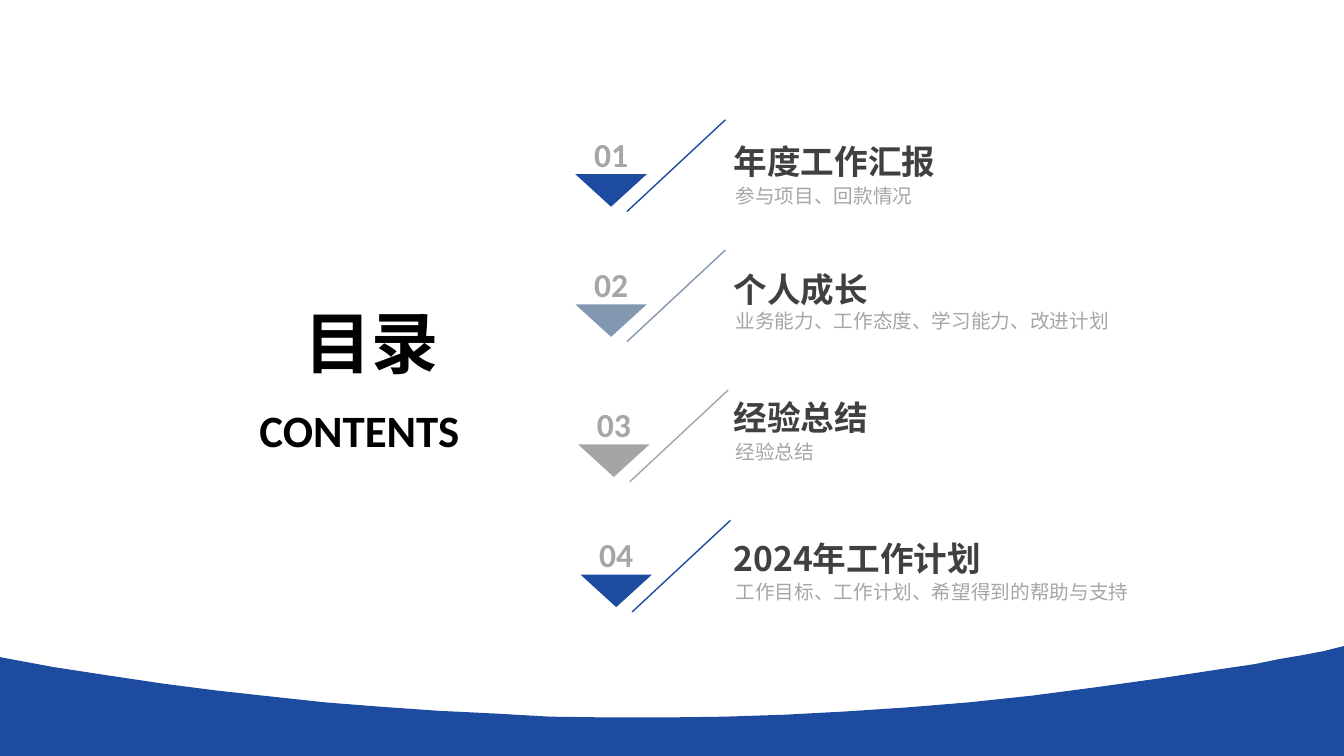
"""Build a contents slide with four numbered sections above a blue wave."""
from dataclasses import dataclass

from lxml import etree
from pptx import Presentation
from pptx.dml.color import RGBColor
from pptx.enum.shapes import MSO_CONNECTOR
from pptx.enum.text import MSO_ANCHOR, MSO_AUTO_SIZE, PP_ALIGN
from pptx.oxml.ns import qn
from pptx.util import Cm, Pt

LEFT, CENTER = PP_ALIGN.LEFT, PP_ALIGN.CENTER
TOP, MIDDLE, BOTTOM = MSO_ANCHOR.TOP, MSO_ANCHOR.MIDDLE, MSO_ANCHOR.BOTTOM
FIT_SHAPE = MSO_AUTO_SIZE.SHAPE_TO_FIT_TEXT
STRAIGHT = MSO_CONNECTOR.STRAIGHT

CJK, LATIN = "Noto Sans CJK SC", "Calibri"
COLORS = {
    "blue": "1D4BA0", "steel": "8497B0", "gray": "A5A5A5",
    "black": "000000", "title": "404040", "muted": "A6A6A6",
}
WAVE = [
    (33.87, 16.28), (33.87, 19.1), (0, 19.1), (0, 16.56), (1.35, 16.81),
    (2.72, 17.02), (4.06, 17.22), (5.44, 17.4), (6.81, 17.55), (8.2, 17.7),
    (9.6, 17.81), (11.02, 17.91), (12.45, 17.98), (13.87, 18.06),
    (15.32, 18.08), (16.79, 18.08), (18.26, 18.06), (19.79, 18.01),
    (21.29, 17.93), (22.83, 17.83), (24.41, 17.7), (26.01, 17.53),
    (27.61, 17.32), (29.26, 17.09), (30.91, 16.84), (31.6, 16.74),
    (32.23, 16.61), (32.82, 16.51), (33.35, 16.41),
]


@dataclass(frozen=True)
class Style:
    """Look of one kind of text."""
    size: int
    font: str
    color: str
    bold: bool = True
    align: PP_ALIGN = LEFT
    anchor: MSO_ANCHOR = TOP
    inset: bool = True
    spacing: float = 1.0


@dataclass(frozen=True)
class Section:
    """One numbered entry: marker corner, text tops and widths in cm."""
    title: str
    detail: str
    color: str
    x: float
    y: float
    title_top: float
    title_width: float
    detail_top: float
    detail_width: float = 10
    detail_height: float = 0.86
    detail_spacing: float = 1.0


HEADING = Style(48, CJK, "black", align=CENTER, anchor=MIDDLE, inset=False)
SUBHEADING = Style(32, LATIN, "black", align=CENTER, inset=False)
NUMBER = Style(24, LATIN, "muted", align=CENTER, anchor=BOTTOM, inset=False)
TITLE = Style(24, CJK, "title", spacing=1.3)

SECTIONS = [
    Section("年度工作汇报", "参与项目、回款情况", "blue",
            14.5, 4.39, 3.12, 8.59, 4.5),
    Section("个人成长", "业务能力、工作态度、学习能力、改进计划", "steel",
            14.5, 7.67, 6.35, 6.3, 7.65),
    Section("经验总结", "经验总结", "gray",
            14.57, 11.2, 9.58, 6.3, 10.97),
    Section("2024年工作计划", "工作目标、工作计划、希望得到的帮助与支持", "blue",
            14.63, 14.48, 13.13, 9.12, 14.38, 11.68, 0.97, 1.2),
]


def rgb(name: str) -> RGBColor:
    """Look up a palette colour."""
    return RGBColor.from_string(COLORS[name])


def add_text(s, text: str, box: tuple, style: Style) -> None:
    """Add a text box, with its box given in cm."""
    tf = s.shapes.add_textbox(*map(Cm, box)).text_frame
    tf.word_wrap = True
    tf.auto_size = FIT_SHAPE
    tf.vertical_anchor = style.anchor
    if not style.inset:
        tf.margin_left = tf.margin_right = tf.margin_top = tf.margin_bottom = 0
    tf.text = text
    p = tf.paragraphs[0]
    p.alignment = style.align
    p.line_spacing = style.spacing
    r = p.runs[0]
    r.font.size = Pt(style.size)
    r.font.bold = style.bold
    r.font.name = style.font
    r.font.color.rgb = rgb(style.color)
    etree.SubElement(r.font._element, qn("a:ea")).set("typeface", style.font)


def add_polygon(s, points: list, color: str) -> None:
    """Add a closed, filled outline, with its points given in cm."""
    (x, y), *rest = points
    builder = s.shapes.build_freeform(Cm(x), Cm(y))
    builder.add_line_segments([(Cm(px), Cm(py)) for px, py in rest], close=True)
    sp = builder.convert_to_shape()
    sp.shadow.inherit = False
    sp.fill.solid()
    sp.fill.fore_color.rgb = rgb(color)
    sp.line.fill.background()


def add_slash(s, x: float, y: float, color: str) -> None:
    """Add the diagonal line beside a marker."""
    line = s.shapes.add_connector(
        STRAIGHT, Cm(x + 3.78), Cm(y - 1.37), Cm(x + 1.3), Cm(y + 0.94))
    line.line.color.rgb = rgb(color)
    line.line.width = Pt(1)
    etree.SubElement(line._element.spPr, qn("a:effectLst"))


def add_section(s, number: int, section: Section) -> None:
    """Add one entry with its title, detail, slash, triangle and number."""
    x, y = section.x, section.y
    detail = Style(14, CJK, "muted", bold=False, spacing=section.detail_spacing)
    add_text(s, section.title,
             (18.24, section.title_top, section.title_width, 1.57), TITLE)
    add_text(s, section.detail,
             (18.29, section.detail_top, section.detail_width,
              section.detail_height), detail)
    add_slash(s, x, y, section.color)
    add_polygon(s, [(x, y), (x + 1.8, y), (x + 0.9, y + 0.82)], section.color)
    add_text(s, f"{number:02}", (x - 0.05, y - 1.03, 1.9, 1.02), NUMBER)


def main() -> None:
    """Build and save the slide."""
    prs = Presentation()
    prs.slide_width, prs.slide_height = Cm(33.87), Cm(19.05)
    s = prs.slides.add_slide(prs.slide_layouts[6])
    add_polygon(s, WAVE, "blue")
    add_text(s, "目录", (6.65, 7.59, 5.44, 2.06), HEADING)
    add_text(s, "CONTENTS", (4.6, 10.16, 8.92, 1.37), SUBHEADING)
    for number, section in enumerate(SECTIONS, 1):
        add_section(s, number, section)
    prs.save("out.pptx")


if __name__ == "__main__":
    main()
